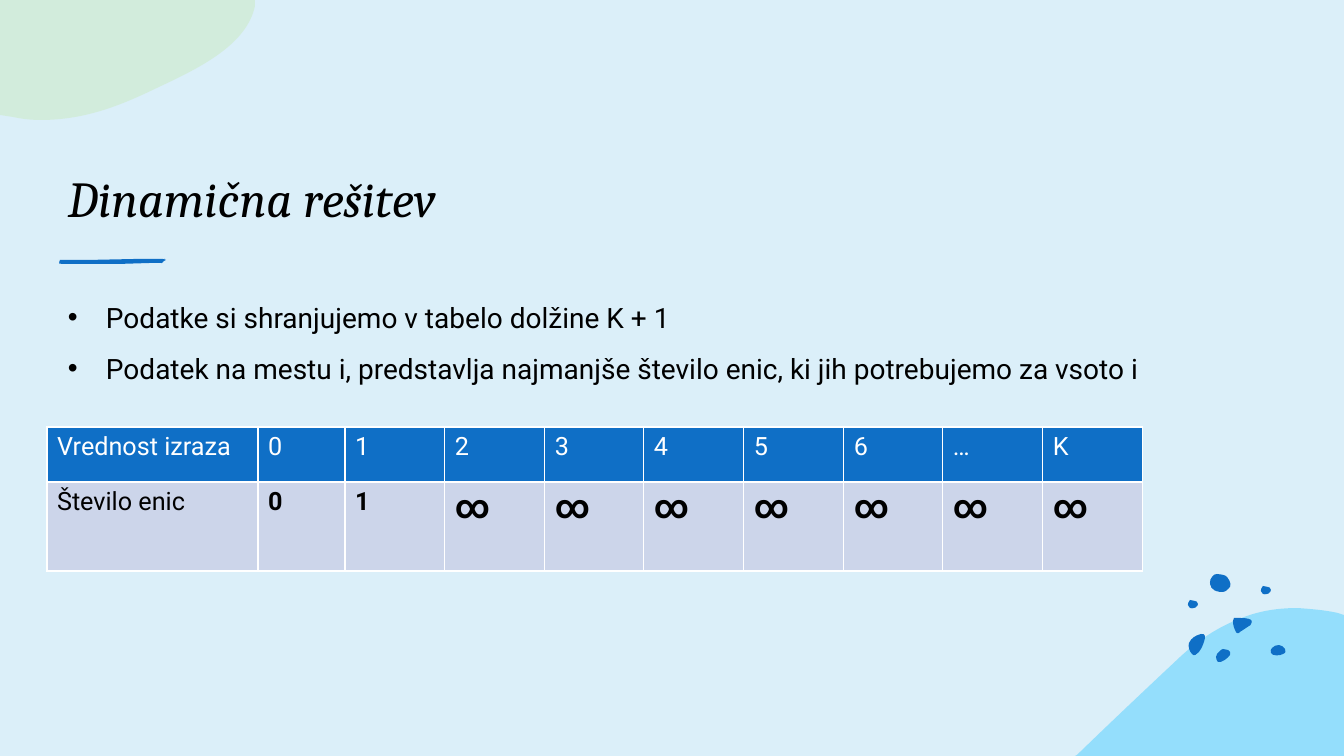
from lxml import etree
from pptx import Presentation
from pptx import util as u
from pptx.dml.color import RGBColor
from pptx.enum import text
from pptx.oxml.ns import qn

PX = u.Inches(1) / 100.8
COLOURS = {
    "background": "DBEFF9", "accent": "0F6FC6", "hill": "4FCEFF", "leaf": "CBEAC0",
    "ink": "000000", "white": "FFFFFF", "row": "CCD5EA",
}
HILL = [(223, 0), (236, 1, 250, 2, 263, 5), (269, 7), (269, 148), (0, 148), (2, 147),
        (36, 114, 71, 81, 103, 51), (126, 29, 149, 16, 172, 8), (189, 2, 206, 0, 223, 0)]
LEAF = [(0, 0), (255, 0), (255, 6), (247, 44, 202, 67, 159, 87),
        (124, 104, 87, 120, 41, 120), (31, 120, 22, 119, 13, 117), (0, 115), (0, 0)]
STROKE = [(3, 5), (30, 5), (60, 5), (93, 4), (100, 4), (105, 5, 103, 2, 107, 1), (104, 0),
          (77, 0), (30, 1), (1, 1), (0, 2, -1, 5, 3, 5)]
SPECK = [(0, 0), (1, 0), (1, 1), (0, 0)]
SPECKS = [(0, 4), (2, 4), (105, 0)]
PEBBLE = [(0, 5), (0, 5, 0, 1, 2, 0), (4, 0, 5, 0, 7, 1), (8, 1, 10, 2, 10, 4),
          (10, 5, 9, 7, 8, 7), (8, 7, 8, 8, 6, 8), (5, 8, 3, 9, 2, 8), (1, 6, 0, 6, 0, 5)]
DOTS = [
    (28, 75, [(7, 0), (9, 0, 10, 0, 12, 1), (14, 2, 15, 4, 14, 6), (12, 9, 6, 14, 2, 13),
              (1, 12, 0, 10, 0, 8), (0, 6, 2, 3, 4, 2), (5, 1, 6, 0, 7, 0)]),
    (1, 60, [(12, 0), (14, 0, 16, 0, 16, 2), (16, 3, 16, 3, 16, 4), (15, 9, 13, 14, 10, 18),
             (8, 20, 5, 23, 3, 20), (0, 17, -1, 12, 0, 9), (1, 6, 3, 5, 5, 3),
             (6, 3, 9, 0, 12, 0)]),
    (83, 71, [(8, 0), (10, 0, 13, 2, 14, 4), (15, 6, 15, 8, 12, 9), (9, 11, 1, 11, 0, 8),
              (-1, 6, 0, 4, 1, 3), (3, 1, 5, 0, 8, 0)]),
    (22, 0, [(1, 12), (0, 12, -1, 6, 2, 3), (4, 1, 4, 0, 7, 0), (10, 0, 14, 1, 16, 2),
             (18, 4, 22, 9, 20, 13), (17, 16, 16, 18, 12, 18), (9, 18, 4, 17, 3, 15),
             (1, 14, 1, 13, 1, 12)]),
    (73, 12, PEBBLE),
    (0, 26, PEBBLE),
    (45, 44, [(5, 0), (11, 0, 22, 0, 18, 6), (18, 7, 17, 8, 16, 8), (13, 10, 10, 12, 7, 14),
              (6, 15, 5, 16, 4, 15), (4, 15, 3, 14, 3, 14), (1, 10, 0, 7, 0, 3),
              (0, 2, 0, 1, 1, 0), (1, 0, 2, 0, 2, 0), (3, 0, 4, 0, 5, 0)]),
]
BULLETS = ["Podatke si shranjujemo v tabelo dolžine K + 1",
           "Podatek na mestu i, predstavlja najmanjše število enic, ki jih potrebujemo za vsoto i"]
VALUES = ["Vrednost izraza", *"0123456", "…", "K"]
ONES = ["Število enic", "0", "1", *"∞" * 7]


def px(length):
    """Turn px into EMU."""
    return u.Emu(round(length * PX))


def rgb(name):
    """Look up a colour by its name."""
    return RGBColor.from_string(COLOURS[name])


def write(paragraph, words, size, font="Roboto", colour="ink", bold=False, italic=False):
    """Add formatted words to a paragraph."""
    run = paragraph.add_run()
    run.text = words
    run.font.size, run.font.name = u.Pt(size), font
    run.font.bold, run.font.italic = bold, italic
    run.font.color.rgb = rgb(colour)


def bend(blob, outline, left, top):
    """Turn the straight steps into cubic curves where the outline has them."""
    steps = list(blob._element.iter(qn("a:lnTo")))
    for line, step in zip(steps, outline[1:]):
        if len(step) == 6:
            curve = etree.Element(qn("a:cubicBezTo"))
            for x, y in zip(step[::2], step[1::2]):
                etree.SubElement(curve, qn("a:pt"), x=str(px(x - left)), y=str(px(y - top)))
            line.getparent().replace(line, curve)


def draw_blob(slide, left, top, outline, colour, alpha=None):
    """Fill an outline whose origin is at left, top."""
    ends = [step[-2:] for step in outline]
    points = [(px(left + x), px(top + y)) for x, y in ends]
    builder = slide.shapes.build_freeform(*points[0], scale=1.0)
    builder.add_line_segments(points[1:], close=True)
    blob = builder.convert_to_shape()
    bend(blob, outline, min(x for x, _ in ends), min(y for _, y in ends))
    blob.shadow.inherit = False
    blob.line.fill.background()
    blob.fill.solid()
    blob.fill.fore_color.rgb = rgb(colour)
    if alpha:
        tint = next(blob._element.spPr.iter(qn("a:srgbClr")))
        etree.SubElement(tint, qn("a:alpha"), val=str(alpha * 1000))


def draw_dots(slide, left, top):
    """Scatter the dots from the corner given."""
    for x, y, outline in DOTS:
        draw_blob(slide, left + x, top + y, outline, "accent")


def draw_underline(slide, left, top):
    """Draw the brush stroke and its specks from the corner given."""
    for x, y in SPECKS:
        draw_blob(slide, left + x, top + y, SPECK, "accent")
    draw_blob(slide, left, top, STROKE, "accent")


def add_frame(slide, box, anchor):
    """Add a wrapping text frame in the box."""
    frame = slide.shapes.add_textbox(*map(px, box)).text_frame
    frame.word_wrap = True
    frame.vertical_anchor = anchor
    return frame


def add_title(slide, box):
    """Write the title at the foot of the box."""
    frame = add_frame(slide, box, text.MSO_ANCHOR.BOTTOM)
    write(frame.paragraphs[0], "Dinamična rešitev", 36, font="Cambria", italic=True)


def add_bullets(slide, box):
    """Write the bulleted lines from the top of the box."""
    frame = add_frame(slide, box, text.MSO_ANCHOR.TOP)
    for i, line in enumerate(BULLETS):
        paragraph = frame.add_paragraph() if i else frame.paragraphs[0]
        paragraph.line_spacing = 1.1
        paragraph.space_before = u.Pt(10)
        properties = paragraph._p.get_or_add_pPr()
        properties.set("marL", str(px(38)))
        properties.set("indent", str(-px(38)))
        etree.SubElement(properties, qn("a:buFont"), typeface="Arial")
        etree.SubElement(properties, qn("a:buChar"), char="•")
        write(paragraph, line, 20)


def add_borders(cell):
    """Give a cell thin white borders."""
    properties = cell._tc.get_or_add_tcPr()
    for side in "LRTB":
        border = etree.SubElement(properties, qn("a:ln" + side), w=str(u.Pt(1)))
        paint = etree.SubElement(border, qn("a:solidFill"))
        etree.SubElement(paint, qn("a:srgbClr"), val=COLOURS["white"])


def add_value_table(slide, box):
    """Build the table of sums and their counts of ones."""
    width, height = box[2:]
    header, label, zero = 55, 211, 87
    rest = width - label - zero
    edges = [0, label] + [label + zero + round(rest * i / 8) for i in range(9)]
    table = slide.shapes.add_table(2, len(VALUES), *map(px, box)).table
    table.first_row = table.horz_banding = False
    table.rows[0].height, table.rows[1].height = px(header), px(height - header)
    for column, start, end in zip(table.columns, edges, edges[1:]):
        column.width = px(end - start)
    for r, (words, fill, ink) in enumerate([(VALUES, "accent", "white"), (ONES, "row", "ink")]):
        for c, word in enumerate(words):
            cell = table.cell(r, c)
            add_borders(cell)
            cell.fill.solid()
            cell.fill.fore_color.rgb = rgb(fill)
            write(cell.text_frame.paragraphs[0], word, 24 if word == "∞" else 18,
                  colour=ink, bold=bool(r and c))


def main():
    """Build and save the slide."""
    deck = Presentation()
    deck.slide_width, deck.slide_height = px(1344), px(756)
    slide = deck.slides.add_slide(deck.slide_layouts[6])
    slide.background.fill.solid()
    slide.background.fill.fore_color.rgb = rgb("background")
    draw_blob(slide, 1075, 608, HILL, "hill", alpha=50)
    draw_dots(slide, 1188, 574)
    draw_blob(slide, 0, 0, LEAF, "leaf", alpha=50)
    draw_underline(slide, 59, 259)
    add_title(slide, (58, 87, 1111, 146))
    add_bullets(slide, (58, 292, 1111, 146))
    add_value_table(slide, (47, 427, 1096, 144))
    deck.save("out.pptx")


if __name__ == "__main__":
    main()
